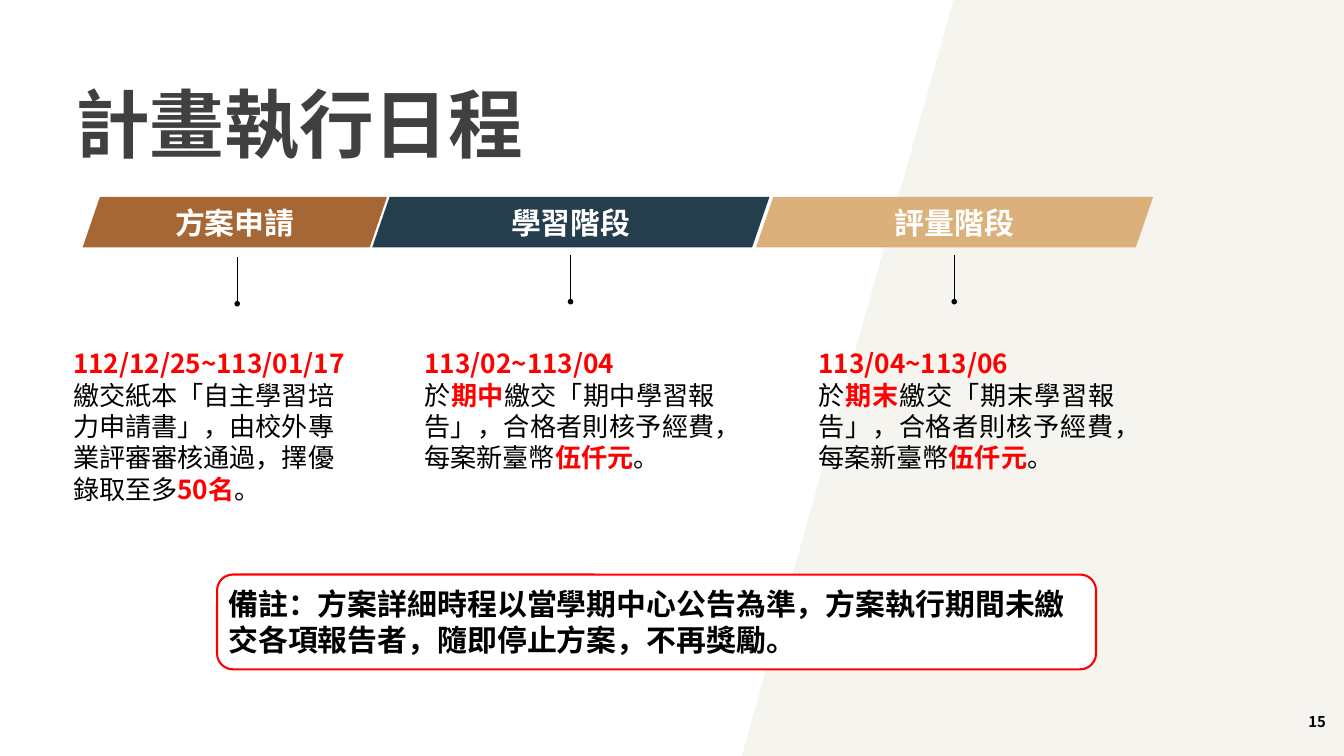
from lxml import etree
from pptx import Presentation
from pptx.dml.color import RGBColor
from pptx.enum import shapes, text
from pptx.oxml import ns
from pptx.util import Inches, Pt

FONT = "Noto Sans CJK SC"
WHITE = RGBColor(0xFF, 0xFF, 0xFF)
BLACK = RGBColor(0, 0, 0)
RED = RGBColor(0xFF, 0, 0)
GREY = RGBColor(0x40, 0x40, 0x40)
CREAM = RGBColor(0xF6, 0xF4, 0xEF)
BROWN = RGBColor(0xA6, 0x67, 0x35)
NAVY = RGBColor(0x24, 0x3E, 0x4D)
SAND = RGBColor(0xDC, 0xB0, 0x7B)
LEFT, CENTER, RIGHT, JUSTIFY = (
    text.PP_ALIGN.LEFT, text.PP_ALIGN.CENTER, text.PP_ALIGN.RIGHT, text.PP_ALIGN.JUSTIFY)


def write(frame, paragraphs, size, align=LEFT, anchor=text.MSO_ANCHOR.MIDDLE):
    """Fill a text frame with paragraphs of (words, colour, bold) runs."""
    frame.word_wrap = True
    frame.auto_size = text.MSO_AUTO_SIZE.NONE
    frame.vertical_anchor = anchor
    for index, runs in enumerate(paragraphs):
        paragraph = frame.paragraphs[0] if index == 0 else frame.add_paragraph()
        paragraph.alignment = align
        for words, colour, bold in runs:
            run = paragraph.add_run()
            run.text = words
            run.font.name, run.font.size, run.font.bold = FONT, Pt(size), bold
            run.font.color.rgb = colour
            properties = run.font._element
            etree.SubElement(properties, ns.qn("a:ea"), typeface=FONT)


def add_box(slide, kind, box, fill, line=None):
    """Add a flat preset shape, outlined in the line colour if there is one."""
    shape = slide.shapes.add_shape(kind, *map(Inches, box))
    shape.shadow.inherit = False
    shape.fill.solid()
    shape.fill.fore_color.rgb = fill
    if line is None:
        shape.line.fill.background()
    else:
        shape.line.color.rgb = line
        shape.line.width = Pt(2.25)
    return shape


def add_band(slide, top_left, bottom_left, width, height):
    """Draw the slanted background band up to the slide's right edge."""
    builder = slide.shapes.build_freeform(Inches(top_left), 0)
    corners = [(width, 0), (width, height), (bottom_left, height)]
    builder.add_line_segments([(Inches(x), Inches(y)) for x, y in corners])
    band = builder.convert_to_shape()
    band.shadow.inherit = False
    band.fill.solid()
    band.fill.fore_color.rgb = CREAM
    band.line.fill.background()


def add_title(slide, box, words):
    """Place the title placeholder in front of the band."""
    title = slide.shapes.title
    title.left, title.top, title.width, title.height = map(Inches, box)
    frame = title.text_frame
    frame.margin_left = frame.margin_top = frame.margin_right = frame.margin_bottom = 0
    write(frame, [[(words, GREY, True)]], 80, anchor=text.MSO_ANCHOR.TOP)
    slide.shapes._spTree.append(title._element)


def add_stage(slide, left, width, name, colour):
    """Draw one slanted stage of the timeline."""
    stage = add_box(slide, shapes.MSO_SHAPE.PARALLELOGRAM, (left, 2.93, width, 0.75), colour)
    stage.adjustments[0] = 0.343
    write(stage.text_frame, [[(name, WHITE, True)]], 32, CENTER)


def add_pin(slide, x, top):
    """Draw a thin vertical line that ends in a dot."""
    pin = slide.shapes.add_connector(
        shapes.MSO_CONNECTOR.STRAIGHT, Inches(x), Inches(top), Inches(x), Inches(top + 0.69))
    pin.line.color.rgb = BLACK
    pin.line.width = Pt(0.75)
    etree.SubElement(pin.line._get_or_add_ln(), ns.qn("a:tailEnd"), type="oval")
    etree.SubElement(pin._element.spPr, ns.qn("a:effectLst"))


def add_text(slide, box, paragraphs, size, align=LEFT):
    """Add a wrapping text box."""
    frame = slide.shapes.add_textbox(*map(Inches, box)).text_frame
    write(frame, paragraphs, size, align)


def report_text(dates, term):
    """Return the paragraphs about the report due at one point of the term."""
    return [
        [(dates, RED, True)],
        [("於", BLACK, False), (term, RED, True),
         (f"繳交「{term}學習報告」，合格者則核予經費，每案新臺幣", BLACK, False),
         ("伍仟元", RED, True), ("。", BLACK, False)],
    ]


def add_note(slide, box, words):
    """Add the rounded remark box."""
    note = add_box(slide, shapes.MSO_SHAPE.ROUNDED_RECTANGLE, box, WHITE, RED)
    write(note.text_frame, [[(words, BLACK, True)]], 32)


def main():
    """Build the schedule slide and save it."""
    presentation = Presentation()
    presentation.slide_width, presentation.slide_height = Inches(20), Inches(11.25)
    slide = presentation.slides.add_slide(presentation.slide_layouts[5])
    add_band(slide, 14.19, 11.04, 20, 11.25)
    add_title(slide, (1.12, 1.16, 11.62, 1.35), "計畫執行日程")
    application = [[
        ("112/12/25~113/01/17", RED, True),
        ("繳交紙本「自主學習培力申請書」，由校外專業評審審核通過，擇優錄取至多", BLACK, False),
        ("50名", RED, True), ("。", BLACK, False)]]
    stages = [
        (11.25, 5.91, "評量階段", SAND, 14.2, 3.8,
         (12.08, 5.11, 4.6, 1.99), report_text("113/04~113/06", "期末"), JUSTIFY),
        (5.54, 5.91, "學習階段", NAVY, 8.49, 3.8,
         (6.22, 5.11, 4.52, 1.99), report_text("113/02~113/04", "期中"), JUSTIFY),
        (1.23, 4.53, "方案申請", BROWN, 3.53, 3.83,
         (0.99, 5.11, 4.42, 2.46), application, LEFT),
    ]
    for left, width, name, colour, pin_x, pin_top, box, paragraphs, align in stages:
        add_stage(slide, left, width, name, colour)
        add_pin(slide, pin_x, pin_top)
        add_text(slide, box, paragraphs, 28, align)
    add_note(slide, (3.23, 8.55, 13.08, 1.41),
             "備註：方案詳細時程以當學期中心公告為準，方案執行期間未繳交各項報告者，隨即停止方案，不再獎勵。")
    add_text(slide, (17.5, 10.54, 2.33, 0.4), [[("15", BLACK, True)]], 16, RIGHT)
    presentation.save("out.pptx")


if __name__ == "__main__":
    main()
